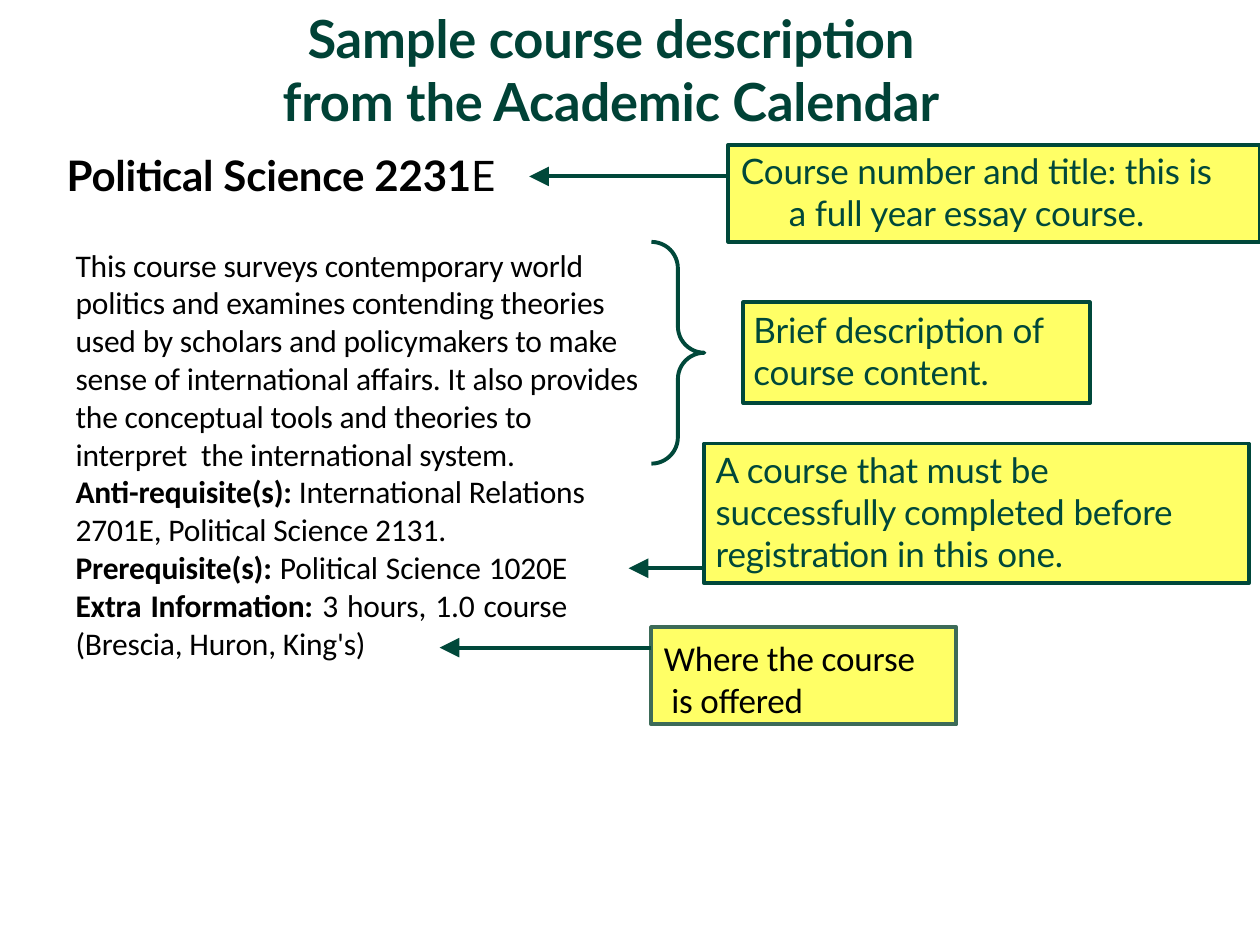
from dataclasses import dataclass

from lxml import etree
from pptx import Presentation
from pptx.dml.color import RGBColor
from pptx.enum.shapes import MSO_CONNECTOR, MSO_SHAPE
from pptx.enum.text import MSO_ANCHOR, PP_ALIGN
from pptx.oxml.ns import qn
from pptx.util import Inches, Pt

RECTANGLE = MSO_SHAPE.RECTANGLE
RIGHT_BRACE = MSO_SHAPE.RIGHT_BRACE
STRAIGHT = MSO_CONNECTOR.STRAIGHT
TOP = MSO_ANCHOR.TOP
LEFT, CENTER, JUSTIFY = PP_ALIGN.LEFT, PP_ALIGN.CENTER, PP_ALIGN.JUSTIFY


@dataclass(frozen=True)
class Theme:
    title: RGBColor = RGBColor(0x00, 0x42, 0x36)
    green: RGBColor = RGBColor(0x00, 0x48, 0x3A)
    soft_green: RGBColor = RGBColor(0x3D, 0x6B, 0x58)
    yellow: RGBColor = RGBColor(0xFF, 0xFF, 0x66)
    black: RGBColor = RGBColor(0, 0, 0)
    display_font: str = "Lato"
    body_font: str = "Calibri"
    title_size: int = 30
    heading_size: int = 24
    label_size: int = 20
    body_size: int = 18
    line: float = 2.25
    tracking: float = -0.1


THEME = Theme()


def write_paragraph(para, spans, *, size, color, font=THEME.display_font,
                    align=LEFT, left=0, first=0, right=0):
    """Fill a paragraph with (text, bold) spans; indents are in inches."""
    para.alignment = align
    properties = para._p.get_or_add_pPr()
    for name, value in (("marL", left), ("marR", right), ("indent", first)):
        properties.set(name, str(Inches(value)))
    for text, bold in spans:
        span = para.add_run()
        span.text = text
        span.font.name = font
        span.font.size = Pt(size)
        span.font.bold = bold
        span.font.color.rgb = color
        span._r.get_or_add_rPr().set("spc", str(round(THEME.tracking * 100)))


def prepare_frame(shape, left=0, top=0, right=0):
    frame = shape.text_frame
    frame.word_wrap = True
    frame.vertical_anchor = TOP
    frame.margin_left, frame.margin_top = Inches(left), Inches(top)
    frame.margin_right, frame.margin_bottom = Inches(right), 0
    return frame


def add_text_box(page, box):
    return prepare_frame(page.shapes.add_textbox(*map(Inches, box)))


def add_title(page, box):
    frame = add_text_box(page, box)
    lines = ("Sample course description", "from the Academic Calendar")
    for index, line in enumerate(lines):
        para = frame.add_paragraph() if index else frame.paragraphs[0]
        write_paragraph(para, [(line, True)], size=THEME.title_size,
                        color=THEME.title, align=CENTER)


def add_course_heading(page, box):
    frame = add_text_box(page, box)
    write_paragraph(frame.paragraphs[0],
                    [("Political Science 2231", True), ("E", False)],
                    size=THEME.heading_size, color=THEME.black, left=0.01)


def add_course_details(page, box):
    frame = add_text_box(page, box)
    entries = (
        ([("This course surveys contemporary world politics and examines "
           "contending theories used by scholars and policymakers to make "
           "sense of international affairs. It also provides the conceptual "
           "tools and theories to interpret  the international system.", False)],
         LEFT, 0.05),
        ([("Anti-requisite(s): ", True),
          ("International Relations 2701E, Political Science 2131.", False)],
         LEFT, 0.05),
        ([("Prerequisite(s): ", True), ("Political Science 1020E ", False),
          ("Extra Information: ", True),
          ("3 hours, 1.0 course (Brescia, Huron, King's)", False)],
         JUSTIFY, 0.68),
    )
    for index, (spans, align, right) in enumerate(entries):
        para = frame.add_paragraph() if index else frame.paragraphs[0]
        write_paragraph(para, spans, size=THEME.body_size, color=THEME.black,
                        font=THEME.body_font, align=align, left=0.01,
                        right=right)


def add_label(page, box, text, insets, *, line=THEME.green, **text_format):
    shape = page.shapes.add_shape(RECTANGLE, *map(Inches, box))
    shape.shadow.inherit = False
    shape.fill.solid()
    shape.fill.fore_color.rgb = THEME.yellow
    shape.line.color.rgb = line
    shape.line.width = Pt(THEME.line)
    text_format = {"color": THEME.green, **text_format}
    write_paragraph(prepare_frame(shape, *insets).paragraphs[0],
                    [(text, False)], size=THEME.label_size, **text_format)


def add_brace(page, box):
    brace = page.shapes.add_shape(RIGHT_BRACE, *map(Inches, box))
    brace.shadow.inherit = False
    brace.fill.background()
    brace.line.color.rgb = THEME.green
    brace.line.width = Pt(THEME.line)
    brace.adjustments[0] = 0.5


def add_arrow(page, start, end, y):
    arrow = page.shapes.add_connector(
        STRAIGHT, Inches(start), Inches(y), Inches(end), Inches(y))
    arrow.line.color.rgb = THEME.green
    arrow.line.width = Pt(THEME.line)
    etree.SubElement(arrow.line._get_or_add_ln(), qn("a:tailEnd"),
                     type="triangle", w="lg", len="lg")
    etree.SubElement(arrow._element.spPr, qn("a:effectLst"))


def add_annotations(page):
    # Yellow labels
    add_label(page, (5.78, 1.15, 4.22, 0.77),
              "Course number and title: this is a full year essay course.",
              (0.09, 0.04, 0.25), left=0.39, first=-0.38)
    add_label(page, (5.9, 2.4, 2.75, 0.8),
              "Brief description of course content.", (0.08, 0.05, 0))
    add_label(page, (5.59, 3.52, 4.32, 1.11),
              "A course that must be successfully completed before "
              "registration in this one.", (0.09, 0.04, 0.44))
    add_label(page, (5.17, 4.98, 2.42, 0.77), "Where the course is offered",
              (0.1, 0.07, 0.2), line=THEME.soft_green, color=THEME.black,
              font=THEME.body_font, left=0.06, first=-0.06)

    # Pointers from the labels to the course text
    add_brace(page, (5.17, 1.92, 0.42, 1.76))
    for start, end, y in ((5.78, 4.2, 1.4), (5.59, 4.99, 4.51),
                          (5.17, 3.49, 5.14)):
        add_arrow(page, start, end, y)


def main():
    deck = Presentation()
    deck.slide_width, deck.slide_height = Inches(10), Inches(7.5)
    page = deck.slides.add_slide(deck.slide_layouts[6])
    add_title(page, (2.07, 0.05, 5.56, 1.02))
    add_course_heading(page, (0.52, 1.19, 3.6, 0.42))
    add_course_details(page, (0.59, 1.95, 4.59, 3.33))
    add_annotations(page)
    deck.save("out.pptx")


if __name__ == "__main__":
    main()
